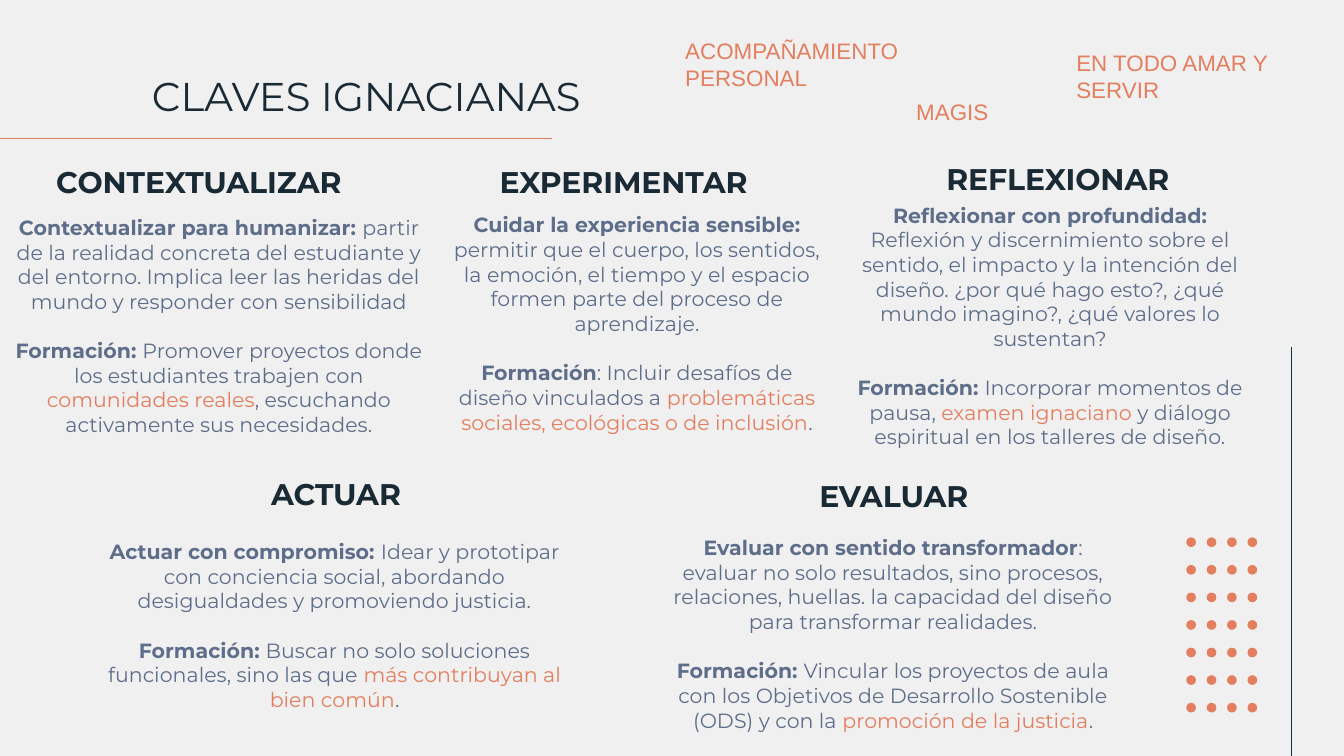
from lxml import etree
from pptx import Presentation
from pptx.dml.color import RGBColor
from pptx.enum import shapes, text
from pptx.oxml.ns import qn
from pptx.util import Pt

BACKGROUND, DARK, TEAL = "F0F0F0", "1A2A35", "0C343D"
SLATE, CORAL = "5E6E8A", "E37E5F"
INSET, LINE_HEIGHT = 7.2, 13.2

TITLE = "CLAVES IGNACIANAS"

# Each paragraph holds its lead, plain, accented and closing wording.
KEYS = [
    {"heading": "CONTEXTUALIZAR", "heading_at": (10.1, 87.1),
     "body_at": (-2.9, 107.9, 240.5), "lines": 9,
     "body": [
         ("Contextualizar para humanizar: ",
          "partir de la realidad concreta del estudiante y del entorno. Implica leer "
          "las heridas del mundo y responder con sensibilidad"),
         ("Formación: ", "Promover proyectos donde los estudiantes trabajen con ",
          "comunidades reales", ", escuchando activamente sus necesidades.")]},
    {"heading": "EXPERIMENTAR", "heading_at": (237.6, 87.1),
     "body_at": (234, 106.6, 214.6), "lines": 9,
     "body": [
         ("Cuidar la experiencia sensible: ",
          "permitir que el cuerpo, los sentidos, la emoción, el tiempo y el espacio "
          "formen parte del proceso de aprendizaje."),
         ("Formación", ": Incluir desafíos de diseño vinculados a ",
          "problemáticas sociales, ecológicas o de inclusión", ".")]},
    {"heading": "REFLEXIONAR", "heading_at": (470.2, 85.7),
     "body_at": (451.4, 101.3, 222.5), "lines": 10,
     "body": [
         ("Reflexionar con profundidad: ",
          "Reflexión y discernimiento sobre el sentido, el impacto y la intención del "
          "diseño. ¿por qué hago esto?, ¿qué mundo imagino?, ¿qué valores lo sustentan?"),
         ("Formación: ", "Incorporar momentos de pausa, ", "examen ignaciano ",
          "y diálogo espiritual en los talleres de diseño.")]},
    {"heading": "ACTUAR", "heading_at": (83.5, 254.2),
     "body_at": (46.1, 281.6, 266.4), "lines": 7,
     "body": [
         ("Actuar con compromiso: ",
          "Idear y prototipar con conciencia social, abordando desigualdades y "
          "promoviendo justicia."),
         ("Formación: ", "Buscar no solo soluciones funcionales, sino las que ",
          "más contribuyan al bien común", ".")]},
    {"heading": "EVALUAR", "heading_at": (382.3, 255.6),
     "body_at": (352.1, 279.4, 252.7), "lines": 8,
     "body": [
         ("Evaluar con sentido transformador",
          ": evaluar no solo resultados, sino procesos, relaciones, huellas. la "
          "capacidad del diseño para transformar realidades."),
         ("Formación: ",
          "Vincular los proyectos de aula con los Objetivos de Desarrollo Sostenible "
          "(ODS) y con la ", "promoción de la justicia", ".")]},
]

MOTTOS = [
    ("ACOMPAÑAMIENTO PERSONAL", (360, 16.6, 136.1, 36)),
    ("MAGIS", (483.8, 49, 67, 21.6)),
    ("EN TODO AMAR Y SERVIR", (569.5, 23, 136.1, 36)),
]

RULES = [((0, 74.2), (295.9, 74.2), CORAL), ((691.9, 185.8), (691.9, 405), TEAL)]

DOTS = {"columns": 4, "rows": 8, "left": 635.5, "top": 287.9,
        "x_step": 10.93, "y_step": 14.77, "size": 5.2}
RUN_STYLES = [(SLATE, True), (SLATE, False), (CORAL, False), (SLATE, False)]


def color(hex_string):
    return RGBColor.from_string(hex_string)


def write(shape, paragraphs, size, font="Montserrat", align=text.PP_ALIGN.LEFT,
          anchor=text.MSO_ANCHOR.TOP, gap=0, inset_y=INSET):
    """Fill a shape with paragraphs, each a list of (wording, colour, bold)."""
    frame = shape.text_frame
    frame.word_wrap = True
    frame.auto_size = text.MSO_AUTO_SIZE.NONE
    frame.vertical_anchor = anchor
    frame.margin_left = frame.margin_right = Pt(INSET)
    frame.margin_top = frame.margin_bottom = Pt(inset_y)
    for index, runs in enumerate(paragraphs):
        paragraph = frame.add_paragraph() if index else frame.paragraphs[0]
        paragraph.alignment = align
        paragraph.space_before = Pt(gap if index else 0)
        for wording, hex_string, bold in runs:
            run = paragraph.add_run()
            run.text = wording
            run.font.name = font
            run.font.size = Pt(size)
            run.font.bold = bold
            run.font.color.rgb = color(hex_string)


def add_text(slide, box, paragraphs, size, **style):
    shape = slide.shapes.add_textbox(*map(Pt, box))
    write(shape, paragraphs, size, **style)


def add_key(slide, key):
    centre = text.PP_ALIGN.CENTER
    add_text(slide, (*key["heading_at"], 193, 20.2), [[(key["heading"], DARK, True)]],
             16, align=centre, anchor=text.MSO_ANCHOR.MIDDLE)
    paragraphs = [[(wording, *style) for wording, style in zip(parts, RUN_STYLES)]
                  for parts in key["body"]]
    height = key["lines"] * LINE_HEIGHT + 2 * INSET
    add_text(slide, (*key["body_at"], height), paragraphs, 11, align=centre,
             gap=LINE_HEIGHT)


def add_rule(slide, start, end, hex_string):
    rule = slide.shapes.add_connector(shapes.MSO_CONNECTOR.STRAIGHT,
                                      *map(Pt, (*start, *end)))
    rule.line.color.rgb = color(hex_string)
    rule.line.width = Pt(0.75)
    properties = rule.element.find(qn("p:spPr"))
    etree.SubElement(properties, qn("a:effectLst"))


def add_dots(slide):
    group = slide.shapes.add_group_shape()
    size = Pt(DOTS["size"])
    for column in range(DOTS["columns"]):
        for row in range(DOTS["rows"] - 1):
            dot = group.shapes.add_shape(
                shapes.MSO_SHAPE.OVAL, Pt(DOTS["left"] + column * DOTS["x_step"]),
                Pt(DOTS["top"] + row * DOTS["y_step"]), size, size)
            dot.shadow.inherit = False
            dot.fill.solid()
            dot.fill.fore_color.rgb = color(CORAL)
            dot.line.fill.background()


def main():
    presentation = Presentation()
    presentation.slide_width, presentation.slide_height = Pt(720), Pt(405)
    slide = presentation.slides.add_slide(presentation.slide_layouts[5])
    slide.background.fill.solid()
    slide.background.fill.fore_color.rgb = color(BACKGROUND)

    title = slide.shapes.title
    title.left, title.top, title.width, title.height = map(Pt, (74.2, 31, 318.2, 38.9))
    write(title, [[(TITLE, DARK, False)]], 21.5)

    for start, end, hex_string in RULES:
        add_rule(slide, start, end, hex_string)
    add_dots(slide)
    for key in KEYS:
        add_key(slide, key)
    for motto, box in MOTTOS:
        add_text(slide, box, [[(motto, CORAL, False)]], 12, font="Arial", inset_y=3.6)
    presentation.save("out.pptx")


if __name__ == "__main__":
    main()
